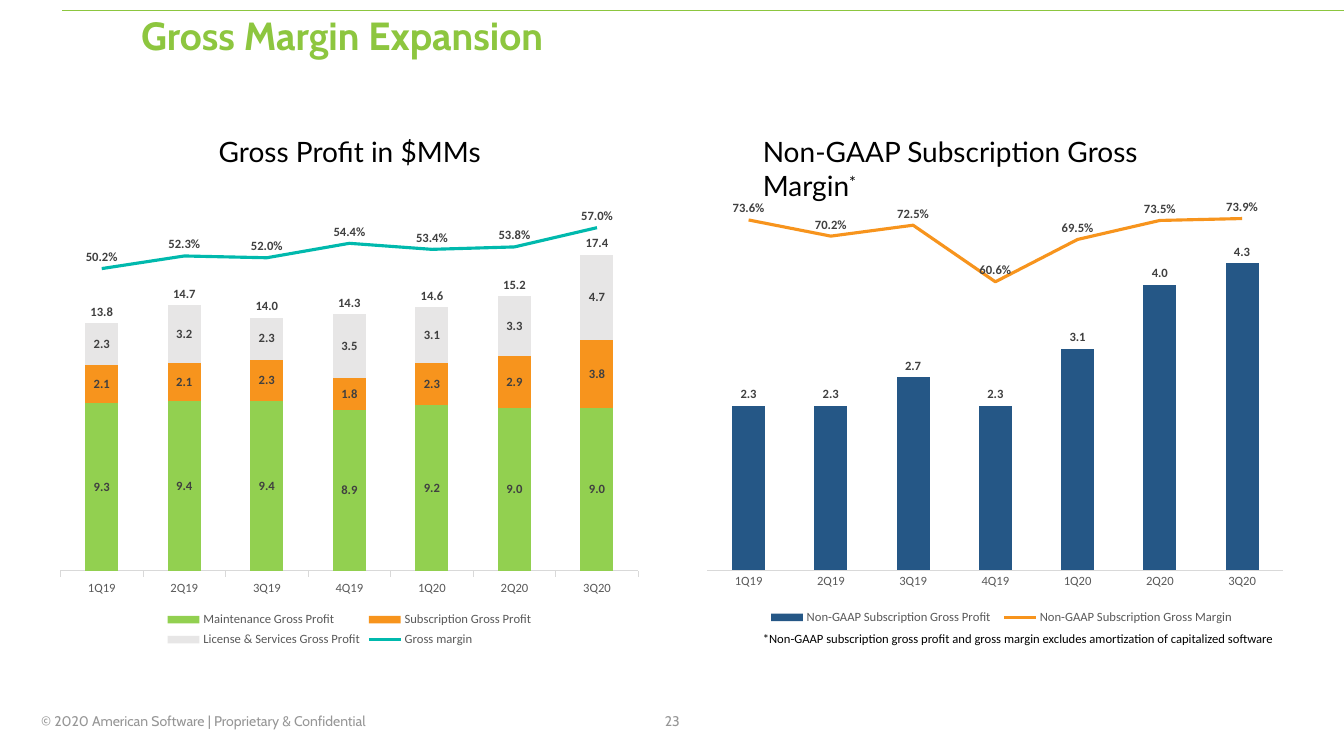
from pptx import Presentation
from pptx.chart.data import CategoryChartData
from pptx.dml.color import RGBColor
from pptx.enum.chart import (XL_CHART_TYPE as ChartType, XL_LABEL_POSITION as LabelPos,
                             XL_LEGEND_POSITION as LegendPos, XL_MARKER_STYLE as Marker,
                             XL_TICK_LABEL_POSITION as TickLabels, XL_TICK_MARK as Tick)
from pptx.enum.shapes import MSO_CONNECTOR as Connector
from pptx.enum.text import MSO_ANCHOR as Anchor, PP_ALIGN as Align
from pptx.oxml import parse_xml
from pptx.oxml.ns import nsdecls, qn
from pptx.util import Pt


def set_font(font, face, size, color, bold=False):
    font.name, font.size, font.bold = face, Pt(size), bold
    font.color.rgb = RGBColor.from_string(color)


def manual_layout(x, y, w, h, target=""):
    return parse_xml(
        f'<c:layout {nsdecls("c")}><c:manualLayout>{target}'
        '<c:xMode val="edge"/><c:yMode val="edge"/>'
        f'<c:x val="{x}"/><c:y val="{y}"/><c:w val="{w}"/><c:h val="{h}"/>'
        '</c:manualLayout></c:layout>')


deck = Presentation()
deck.slide_width, deck.slide_height = Pt(960), Pt(540)
slide = deck.slides.add_slide(deck.slide_layouts[5])

# Rule across the top
rule = slide.shapes.add_connector(Connector.STRAIGHT, Pt(44.5), Pt(7.2), Pt(960), Pt(7.2))
rule.line.color.rgb = RGBColor.from_string("8CC63F")
rule.line.width = Pt(0.5)
rule._element.spPr.append(parse_xml(f'<a:effectLst {nsdecls("a")}/>'))

# Title
title = slide.shapes.title
title.left, title.top, title.width, title.height = Pt(93.6), Pt(8), Pt(833), Pt(65.5)
title.text_frame.vertical_anchor = Anchor.TOP
heading = title.text_frame.paragraphs[0]
heading.alignment, heading.line_spacing = Align.LEFT, 0.9
heading_run = heading.add_run()
heading_run.text = "Gross Margin Expansion"
set_font(heading_run.font, "Cabin", 28, "8DC63F", True)

# Charts: bars (name, values, color, label position), then the margin line
quarters = ["1Q19", "2Q19", "3Q19", "4Q19", "1Q20", "2Q20", "3Q20"]
charts = [
    dict(kind=ChartType.COLUMN_STACKED, box=(34.6, 143.3, 430, 322.6),
         plot=(0.02, 0.02, 0.96, 0.8), legend=(0.19, 0.9, 0.62, 0.1),
         tick=Tick.OUTSIDE, top=20, line_top=0.6, hidden_entry=3,
         bars=[("Maintenance Gross Profit", (9.3, 9.4, 9.4, 8.9, 9.2, 9, 9),
                "92D050", LabelPos.CENTER),
               ("Subscription Gross Profit", (2.1, 2.1, 2.3, 1.8, 2.3, 2.9, 3.8),
                "F7941D", LabelPos.CENTER),
               ("License & Services Gross Profit", (2.3, 3.2, 2.3, 3.5, 3.1, 3.3, 4.7),
                "E7E6E6", LabelPos.CENTER),
               ("Series 4", (13.8, 14.7, 14, 14.3, 14.6, 15.2, 17.4),
                None, LabelPos.INSIDE_BASE)],
         line=("Gross margin", (0.502, 0.523, 0.52, 0.544, 0.534, 0.538, 0.57), "00B9AD")),
    dict(kind=ChartType.COLUMN_CLUSTERED, box=(496.8, 94.3, 428.4, 355.7),
         plot=(0.02, 0.02, 0.96, 0.86), legend=(0.11, 0.95, 0.8, 0.05),
         tick=Tick.NONE, top=6, line_top=0.9, hidden_entry=None,
         bars=[("Non-GAAP Subscription Gross Profit", (2.3, 2.3, 2.7, 2.3, 3.1, 4, 4.3),
                "255786", LabelPos.OUTSIDE_END)],
         line=("Non-GAAP Subscription Gross Margin",
               (0.736, 0.702, 0.725, 0.606, 0.695, 0.735, 0.739), "F7941D")),
]

for item in charts:
    data = CategoryChartData()
    data.categories = quarters
    for name, values, *_ in item["bars"]:
        data.add_series(name, values, "0.0")
    line_name, margins, line_color = item["line"]
    data.add_series(line_name, margins, "0.0%")
    chart = slide.shapes.add_chart(item["kind"], *map(Pt, item["box"]), data).chart
    chart.has_title = False
    set_font(chart.font, "Calibri", 10, "000000")

    # Main axes
    quarter_axis, profit_axis = chart.category_axis, chart.value_axis
    quarter_axis.major_tick_mark = item["tick"]
    quarter_axis.format.line.color.rgb = RGBColor.from_string("D9D9D9")
    quarter_axis.format.line.width = Pt(0.75)
    set_font(quarter_axis.tick_labels.font, "Calibri", 9, "595959")
    profit_axis.minimum_scale, profit_axis.maximum_scale = 0, item["top"]
    profit_axis.has_major_gridlines = False
    profit_axis.major_tick_mark = Tick.NONE
    profit_axis.tick_label_position = TickLabels.NONE
    profit_axis.format.line.fill.background()

    # Move the last series to a line on a second axis
    plot_area = chart._chartSpace.chart.plotArea
    bar_xml = plot_area.find(qn("c:barChart"))
    margin_xml = bar_xml.findall(qn("c:ser"))[-1]
    for bar_only in margin_xml.findall(qn("c:invertIfNegative")):
        margin_xml.remove(bar_only)
    line_xml = parse_xml(
        f'<c:lineChart {nsdecls("c")}><c:grouping val="standard"/><c:varyColors val="0"/>'
        '<c:marker val="1"/><c:axId val="5001"/><c:axId val="5002"/></c:lineChart>')
    line_xml.insert(2, margin_xml)
    bar_xml.addnext(line_xml)
    last_axis = plot_area.findall(qn("c:valAx"))[-1]
    last_axis.addnext(parse_xml(
        f'<c:valAx {nsdecls("c", "a")}><c:axId val="5002"/><c:scaling>'
        f'<c:orientation val="minMax"/><c:max val="{item["line_top"]}"/><c:min val="0"/>'
        '</c:scaling><c:delete val="0"/><c:axPos val="r"/>'
        '<c:numFmt formatCode="0.0%" sourceLinked="0"/><c:majorTickMark val="none"/>'
        '<c:minorTickMark val="none"/><c:tickLblPos val="none"/>'
        '<c:spPr><a:ln><a:noFill/></a:ln></c:spPr>'
        '<c:crossAx val="5001"/><c:crosses val="max"/></c:valAx>'))
    last_axis.addnext(parse_xml(
        f'<c:catAx {nsdecls("c")}><c:axId val="5001"/><c:scaling>'
        '<c:orientation val="minMax"/></c:scaling><c:delete val="1"/>'
        '<c:axPos val="b"/><c:crossAx val="5002"/><c:crosses val="autoZero"/></c:catAx>'))

    # Series colors and labels
    bar_plot, line_plot = chart.plots
    bar_plot.gap_width = 150
    bar_plot.vary_by_categories = False
    label_rules = [("0.0", position) for *_, position in item["bars"]]
    label_rules.append(("0.0%", LabelPos.ABOVE))
    margin = line_plot.series[0]
    for series, (number_format, position) in zip([*bar_plot.series, margin], label_rules):
        labels = series.data_labels
        labels.show_value = True
        labels.number_format, labels.number_format_is_linked = number_format, False
        labels.position = position
        set_font(labels.font, "Calibri", 9, "404040", True)
    for series, (_, _, color, _) in zip(bar_plot.series, item["bars"]):
        if color:
            series.format.fill.solid()
            series.format.fill.fore_color.rgb = RGBColor.from_string(color)
        else:
            series.format.fill.background()
    margin.smooth = False
    margin.marker.style = Marker.NONE
    margin.format.line.color.rgb = RGBColor.from_string(line_color)
    margin.format.line.width = Pt(2.25)

    # Plot and legend placement
    for old_layout in plot_area.findall(qn("c:layout")):
        plot_area.remove(old_layout)
    plot_area.insert(0, manual_layout(*item["plot"], '<c:layoutTarget val="inner"/>'))
    chart.has_legend = True
    legend = chart.legend
    legend.position, legend.include_in_layout = LegendPos.BOTTOM, False
    set_font(legend.font, "Calibri", 9, "595959")
    for old_layout in legend._element.findall(qn("c:layout")):
        legend._element.remove(old_layout)
    # The bottom position is a default value, so its element is made sure of here
    legend_pos = legend._element.get_or_add_legendPos()
    legend_pos.addnext(manual_layout(*item["legend"]))
    if item["hidden_entry"] is not None:
        legend_pos.addnext(parse_xml(
            f'<c:legendEntry {nsdecls("c")}><c:idx val="{item["hidden_entry"]}"/>'
            '<c:delete val="1"/></c:legendEntry>'))

# Chart headings, footnote, footer and page number; a second run is superscript
captions = [
    (("Gross Profit in $MMs",), (130.3, 92.9, 239, 31.7), "Lato", 20, "000000", Align.CENTER),
    (("Non-GAAP Subscription Gross Margin", "*"), (537.8, 92.9, 345.6, 31.7),
     "Lato", 20, "000000", Align.LEFT),
    (("*Non-GAAP subscription gross profit and gross margin excludes amortization of "
      "capitalized software",), (537.8, 447.1, 387.4, 18), "Calibri", 9, "000000", Align.LEFT),
    (("© 2020 American Software | Proprietary & Confidential",), (22.3, 505.4, 270, 19.4),
     "Cabin", 10, "969696", Align.LEFT),
    (("23",), (372.2, 505.4, 216, 19.4), "Cabin", 10, "969696", Align.CENTER),
]
for texts, box, face, size, color, align in captions:
    frame = slide.shapes.add_textbox(*map(Pt, box)).text_frame
    frame.word_wrap = True
    frame.paragraphs[0].alignment = align
    for index, text in enumerate(texts):
        run = frame.paragraphs[0].add_run()
        run.text = text
        set_font(run.font, face, size, color)
        if index:
            run._r.get_or_add_rPr().set("baseline", "30000")

deck.save("out.pptx")
